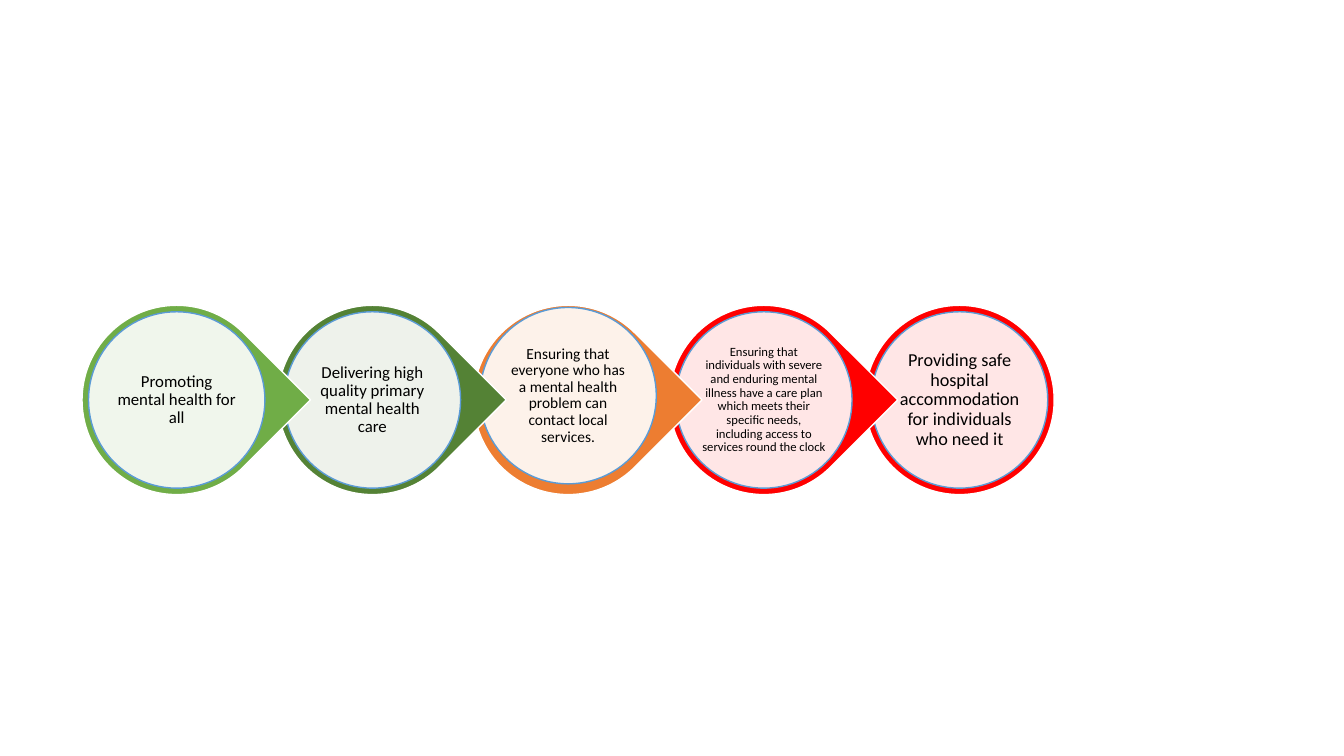
from dataclasses import dataclass

from lxml.etree import SubElement
from pptx import Presentation
from pptx.dml.color import RGBColor
from pptx.enum.shapes import MSO_SHAPE
from pptx.enum.text import MSO_ANCHOR, PP_ALIGN
from pptx.oxml.ns import qn
from pptx.shapes.autoshape import Shape
from pptx.slide import Slide
from pptx.util import Pt

WHITE = RGBColor(0xFF, 0xFF, 0xFF)
BLACK = RGBColor(0x00, 0x00, 0x00)
BLUE = RGBColor(0x5B, 0x9B, 0xD5)
LIGHT_GREEN = RGBColor(0x70, 0xAD, 0x47)
DARK_GREEN = RGBColor(0x54, 0x82, 0x35)
ORANGE = RGBColor(0xED, 0x7D, 0x31)
RED = RGBColor(0xFF, 0x00, 0x00)

# Chain geometry, in points
CHAIN_LEFT, CHAIN_TOP, STEP = 58.6, 218.1, 139.8
RING_SIZE, DISC_SIZE, LABEL_SIZE = 135.2, 126, 90
DISC_INSET = (RING_SIZE - DISC_SIZE) / 2
LABEL_INSET = (DISC_SIZE - LABEL_SIZE) / 2


@dataclass
class Aim:
    wording: str
    color: RGBColor
    font_size: int
    outline: MSO_SHAPE = MSO_SHAPE.TEAR
    disc_lift: float = 0


AIMS = [
    Aim("Promoting mental health for all", LIGHT_GREEN, 12),
    Aim("Delivering high quality primary mental health care", DARK_GREEN, 12),
    Aim("Ensuring that everyone who has a mental health problem can contact "
        "local services.", ORANGE, 11, disc_lift=3.1),
    Aim("Ensuring that individuals with severe and enduring mental illness have "
        "a care plan which meets their specific needs, including access to "
        "services round the clock", RED, 9),
    Aim("Providing safe hospital accommodation for individuals who need it",
        RED, 13, MSO_SHAPE.OVAL),
]


def add_round(slide: Slide, outline: MSO_SHAPE, left: float, top: float,
              size: float, fill: RGBColor, line: RGBColor) -> Shape:
    body = slide.shapes.add_shape(outline, Pt(left), Pt(top), Pt(size), Pt(size))
    body.shadow.inherit = False
    body.fill.solid()
    body.fill.fore_color.rgb = fill
    body.line.color.rgb = line
    body.line.width = Pt(1)
    return body


def add_label(slide: Slide, aim: Aim, left: float, top: float) -> None:
    label = slide.shapes.add_textbox(Pt(left), Pt(top), Pt(LABEL_SIZE), Pt(LABEL_SIZE))
    frame = label.text_frame
    frame.word_wrap = True
    frame.vertical_anchor = MSO_ANCHOR.MIDDLE
    margin = Pt(aim.font_size / 10)
    frame.margin_left = frame.margin_right = margin
    frame.margin_top = frame.margin_bottom = margin
    frame.text = aim.wording
    paragraph = frame.paragraphs[0]
    paragraph.alignment = PP_ALIGN.CENTER
    paragraph.line_spacing = 0.9
    font = paragraph.runs[0].font
    font.name = "Calibri"
    font.size = Pt(aim.font_size)
    font.color.rgb = BLACK


def add_aim(slide: Slide, aim: Aim, left: float) -> None:
    # Coloured ring, with its point turned to the right
    ring = add_round(slide, aim.outline, left, CHAIN_TOP, RING_SIZE, aim.color, WHITE)
    if aim.outline == MSO_SHAPE.TEAR:
        ring.rotation = 45

    # Translucent disc
    disc_left = left + DISC_INSET
    disc_top = CHAIN_TOP + DISC_INSET - aim.disc_lift
    disc = add_round(slide, MSO_SHAPE.OVAL, disc_left, disc_top, DISC_SIZE, WHITE, BLUE)
    fill_color = disc.fill._xPr.find(qn("a:solidFill")).find(qn("a:srgbClr"))
    SubElement(fill_color, qn("a:alpha")).set("val", "90000")

    add_label(slide, aim, disc_left + LABEL_INSET, disc_top + LABEL_INSET)


def main() -> None:
    deck = Presentation()
    deck.slide_width, deck.slide_height = Pt(960), Pt(540)
    slide = deck.slides.add_slide(deck.slide_layouts[6])

    # Right to left, so that each point overlaps the next ring
    for position, aim in reversed(list(enumerate(AIMS))):
        add_aim(slide, aim, CHAIN_LEFT + position * STEP)
    deck.save("out.pptx")


if __name__ == "__main__":
    main()
